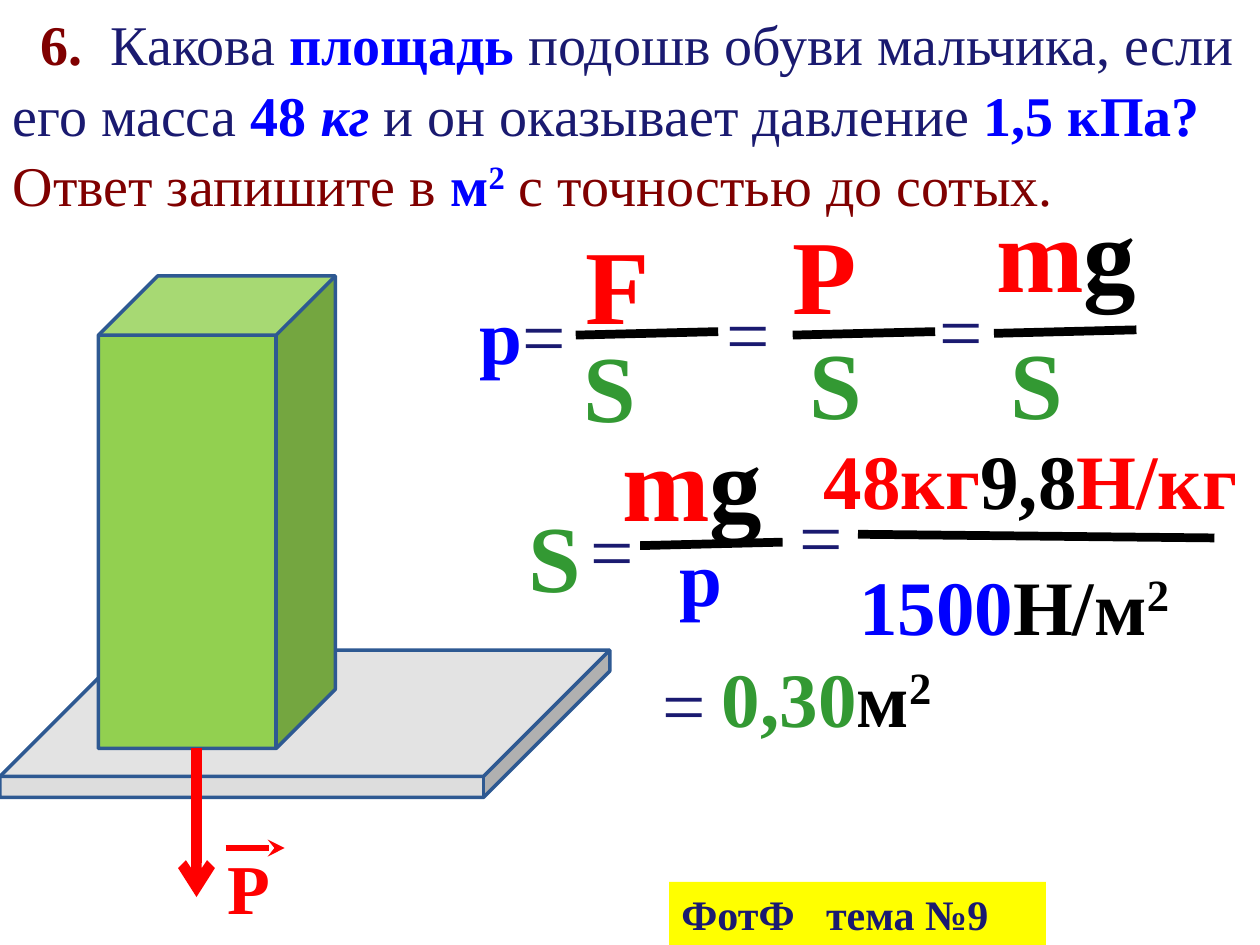
from lxml import etree
from pptx import Presentation
from pptx.dml.color import RGBColor
from pptx.enum.shapes import MSO_CONNECTOR, MSO_SHAPE
from pptx.enum.text import MSO_ANCHOR, MSO_AUTO_SIZE, PP_ALIGN
from pptx.oxml.ns import qn
from pptx.util import Pt

CUBE = MSO_SHAPE.CUBE
STRAIGHT = MSO_CONNECTOR.STRAIGHT
TOP = MSO_ANCHOR.TOP
LEFT = PP_ALIGN.LEFT
NO_AUTOFIT = MSO_AUTO_SIZE.NONE

FONT = "Times New Roman"
RED, GREEN, BLUE = "FF0000", "339933", "0000FF"
BLACK, NAVY, MAROON = "000000", "1A1A70", "800000"
YELLOW, OUTLINE = "FFFF00", "2E5992"
PLAIN = {"bold": False}
ITALIC = {"italic": True}
RAISED = {"baseline": 30000}


def color(hex_code):
    return RGBColor.from_string(hex_code)


class Painter:
    def __init__(self, slide):
        self.slide = slide
        self.shapes = slide.shapes

    def group(self):
        """Direct the following elements into a new group."""
        self.shapes = self.slide.shapes.add_group_shape().shapes

    def ungroup(self):
        self.shapes = self.slide.shapes

    def fill_text(self, frame, spans, size, **layout):
        """Fill a text frame with spans of (text, colour, optional format)."""
        frame.word_wrap = layout.pop("wrap", True)
        frame.auto_size = NO_AUTOFIT
        frame.vertical_anchor = TOP
        frame.margin_left = Pt(layout.pop("inset", 7.2))
        frame.margin_top = Pt(layout.pop("top_inset", 3.6))
        para = frame.paragraphs[0]
        para.alignment = LEFT
        for name, value in layout.items():
            setattr(para, name, value)
        for text, hex_code, *extra in spans:
            span = para.add_run()
            span.text = text
            style = {"name": FONT, "size": Pt(size), "bold": True, "italic": False}
            style.update(*extra)
            baseline = style.pop("baseline", None)
            for name, value in style.items():
                setattr(span.font, name, value)
            span.font.color.rgb = color(hex_code)
            if baseline:
                span._r.get_or_add_rPr().set("baseline", str(baseline))
        return para

    def place(self, shape, left, top, width, height):
        bounds = {"left": left, "top": top, "width": width, "height": height}
        for name, value in bounds.items():
            setattr(shape, name, Pt(value))

    def title(self, spans, bounds, size, first_indent, **layout):
        title = self.slide.shapes.title
        self.place(title, *bounds)
        para = self.fill_text(title.text_frame, spans, size, **layout)
        properties = para._p.get_or_add_pPr()
        properties.set("marL", "0")
        properties.set("indent", str(Pt(first_indent)))

    def text(self, spans, left, top, width, height, size=44, fill=None, **layout):
        box = self.shapes.add_textbox(*map(Pt, (left, top, width, height)))
        if fill:
            box.fill.solid()
            box.fill.fore_color.rgb = color(fill)
        self.fill_text(box.text_frame, spans, size, **layout)

    def cube(self, left, top, width, height, fill, depth=0.25):
        cube = self.shapes.add_shape(CUBE, *map(Pt, (left, top, width, height)))
        cube.adjustments[0] = depth
        cube.shadow.inherit = False
        cube.fill.solid()
        cube.fill.fore_color.rgb = color(fill)
        cube.line.color.rgb = color(OUTLINE)
        cube.line.width = Pt(2)

    def line(self, x1, y1, x2, y2, hex_code=BLACK, width=5, head=None):
        line = self.shapes.add_connector(STRAIGHT, *map(Pt, (x1, y1, x2, y2)))
        line.line.color.rgb = color(hex_code)
        line.line.width = Pt(width)
        if head:
            etree.SubElement(line.line._get_or_add_ln(), qn("a:tailEnd"), type=head)
        etree.SubElement(line._element.spPr, qn("a:effectLst"))

    def equals(self, left, top):
        self.text([("=", NAVY, PLAIN)], left, top, 45.4, 60.5)

    def area(self, left, top):
        self.text([("S", GREEN)], left, top, 73.4, 80, size=54, inset=20.7, top_inset=9)

    def force(self, letter, left, top):
        self.text([(letter, RED)], left, top, 67, 80, size=60, inset=22.2, wrap=False)

    def weight(self, left, top):
        self.text([("m", RED), ("g", BLACK)], left, top, 95, 80, size=60, wrap=False)

    def fraction_bar(self, left, top):
        self.line(left, top, left + 81.4, top - 2)


def main():
    deck = Presentation()
    deck.slide_width, deck.slide_height = Pt(720), Pt(540)
    page = Painter(deck.slides.add_slide(deck.slide_layouts[5]))

    page.title(
        [
            ("6.  ", MAROON),
            ("Какова ", NAVY, PLAIN),
            ("площадь", BLUE),
            (" подошв обуви мальчика, если его масса ", NAVY, PLAIN),
            ("48 ", BLUE),
            ("кг ", BLUE, ITALIC),
            ("и он оказывает давление ", NAVY, PLAIN),
            ("1,5 кПа?", BLUE),
            (" Ответ запишите в ", MAROON, PLAIN),
            ("м", BLUE),
            ("2", BLUE, RAISED),
            (" с точностью до сотых.", MAROON, PLAIN),
        ],
        (0, 0, 720, 124),
        size=32,
        first_indent=16,
        line_spacing=1.05,
        space_before=Pt(5),
        space_after=Pt(10),
    )

    # Block standing on a slab, with its weight vector
    page.cube(0, 371.5, 348.5, 84.2, "DDDDDD", depth=0.858)
    page.cube(56.2, 157.7, 135.4, 270, "92D050")
    page.line(112.3, 427.7, 112.3, 512.6, RED, width=6, head="arrow")
    page.group()
    page.text([("Р", RED)], 123, 479, 62, 55.4, size=40)
    page.line(129, 484.6, 162.7, 484.6, RED, width=3.25, head="stealth")
    page.ungroup()

    # p = F/S = P/S = mg/S
    page.text([("p", BLUE), ("=", NAVY, PLAIN)], 267, 160.6, 73.4, 60.5)
    page.force("F", 312.5, 121.7)
    page.area(312.5, 178.6)
    page.equals(408.2, 159.8)
    page.force("Р", 430.6, 116)
    page.area(442, 176.5)
    page.equals(530, 157.7)
    page.weight(562.3, 103.7)
    page.area(556.6, 177)
    for left, top in ((329, 191.5), (453, 191.5), (568, 190.5)):
        page.fraction_bar(left, top)

    # S = mg/p = numbers
    page.area(281.5, 275.8)
    page.equals(330.5, 283.7)
    page.weight(348.5, 234.7)
    page.fraction_bar(365.8, 311.8)
    page.text([("p", BLUE)], 381, 298.8, 73.4, 60.5)
    page.equals(450, 275.8)
    page.text(
        [("48кг", RED), ("9,8", BLACK), ("Н/кг", RED)],
        463.7, 243.4, 253.4, 60.5, wrap=False,
    )
    page.line(490.3, 305.3, 694, 307.4)
    page.text(
        [("1500", BLUE), ("Н/м", BLACK), ("2", BLACK, RAISED)],
        483.8, 315.4, 236.2, 60.5,
    )

    # Answer and source note
    page.equals(371.5, 371.5)
    page.text(
        [("0,30", GREEN), ("м", BLACK), ("2", BLACK, RAISED)],
        405.4, 368, 157.7, 60.5,
    )
    page.text([("ФотФ   тема №9", NAVY)], 382.3, 504, 215.3, 36, size=24, fill=YELLOW)

    deck.save("out.pptx")


if __name__ == "__main__":
    main()
